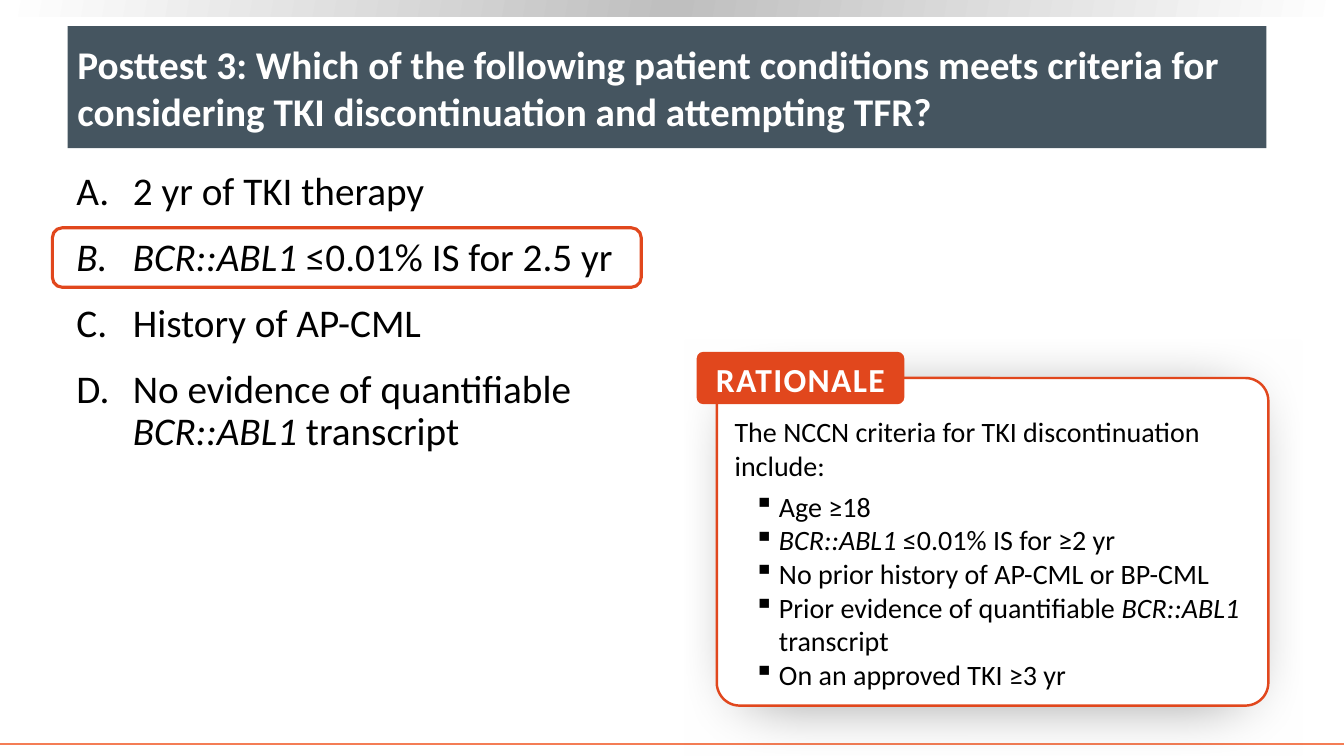
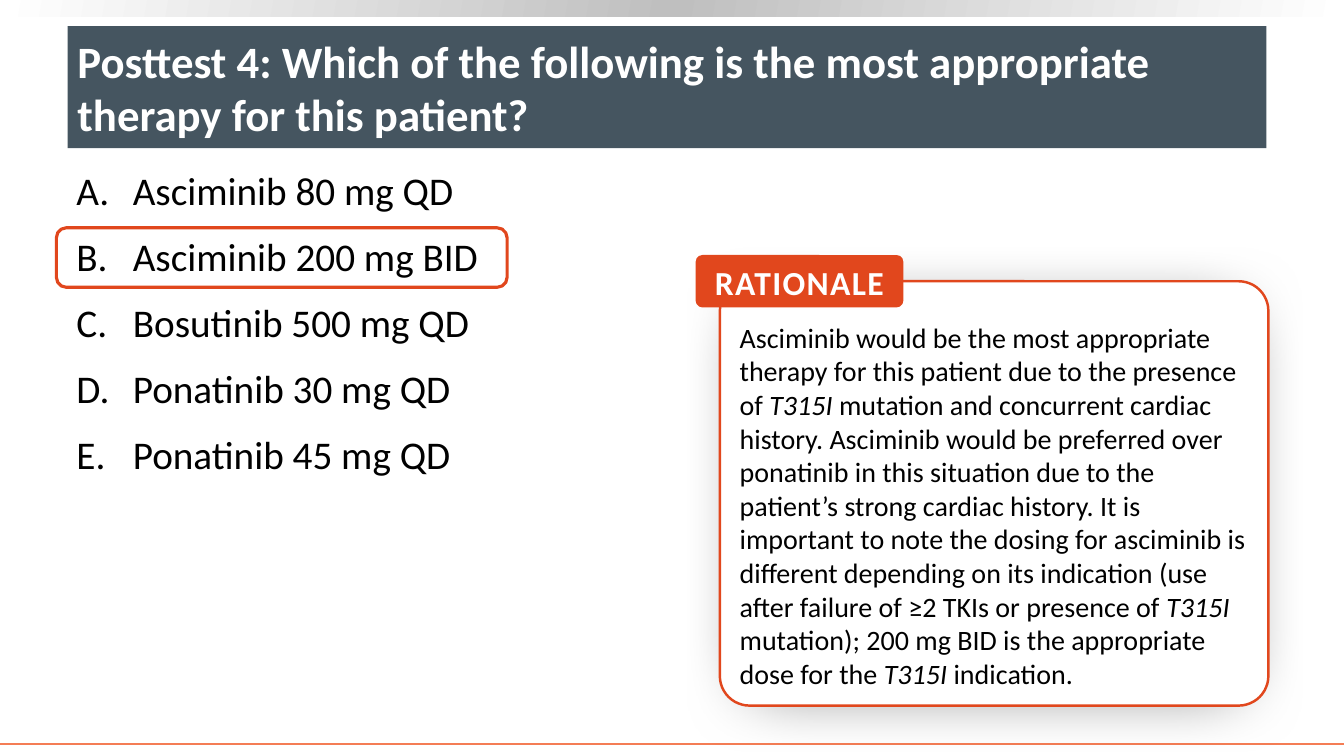
from lxml import etree
from pptx import Presentation
from pptx.dml.color import RGBColor
from pptx.enum import shapes, text
from pptx.oxml.ns import qn
from pptx.util import Pt

PX = 9144
WIDTH, HEIGHT = 1333, 750
FONT = "Calibri"
COLORS = {
    "white": "FFFFFF",
    "black": "000000",
    "silver": "BFBFBF",
    "slate": "455560",
    "orange": "E1471D",
    "footer": "F47D55",
}

QUESTIONS = [
    {
        "title": "Posttest 3: Which of the following patient conditions meets criteria for "
                 "considering TKI discontinuation and attempting TFR?",
        "title_size": 28,
        "answers": [
            "2 yr of TKI therapy",
            "*BCR::ABL1* ≤0.01% IS for 2.5 yr",
            "History of AP-CML",
            "No evidence of quantifiable *BCR::ABL1* transcript",
        ],
        "answers_width": 601,
        "highlight": (52, 226, 584, 59),
        "rationale": "The NCCN criteria for TKI discontinuation include:",
        "criteria": [
            "Age ≥18",
            "*BCR::ABL1* ≤0.01% IS for ≥2 yr",
            "No prior history of AP-CML or BP-CML",
            "Prior evidence of quantifiable *BCR::ABL1* transcript",
            "On an approved TKI ≥3 yr",
        ],
        "panel": (711, 375, 547, 325),
        "tag_left": 691,
    },
    {
        "title": "Posttest 4: Which of the following is the most appropriate therapy "
                 "for this patient?",
        "title_size": 32,
        "answers": [
            "Asciminib 80 mg QD",
            "Asciminib 200 mg BID",
            "Bosutinib 500 mg QD",
            "Ponatinib 30 mg QD",
            "Ponatinib 45 mg QD",
        ],
        "answers_width": 1190,
        "highlight": (56, 226, 447, 59),
        "rationale": "Asciminib would be the most appropriate therapy for this patient due to "
                     "the presence of *T315I* mutation and concurrent cardiac history. Asciminib "
                     "would be preferred over ponatinib in this situation due to the patient’s "
                     "strong cardiac history. It is important to note the dosing for asciminib is "
                     "different depending on its indication (use after failure of ≥2 TKIs or "
                     "presence of *T315I* mutation); 200 mg BID is the appropriate dose for the "
                     "*T315I* indication.",
        "criteria": [],
        "panel": (714, 279, 544, 421),
        "tag_left": 690,
    },
]


def color(name):
    return RGBColor.from_string(COLORS[name])


def child(parent, tag, **attributes):
    return etree.SubElement(parent, qn(tag), attributes)


def add_box(page, kind, area, fill=None, line=None, weight=1, radius=None):
    box = page.shapes.add_shape(kind, *(value * PX for value in area))
    box.shadow.inherit = False
    if fill:
        box.fill.solid()
        box.fill.fore_color.rgb = color(fill)
    else:
        box.fill.background()
    if line:
        box.line.color.rgb = color(line)
        box.line.width = Pt(weight)
    else:
        box.line.fill.background()
    if radius is not None:
        box.adjustments[0] = radius
    return box


def set_frame(box, anchor, insets=(10, 5, 10, 5)):
    frame = box.text_frame
    frame.word_wrap = True
    frame.vertical_anchor = anchor
    (frame.margin_left, frame.margin_top,
     frame.margin_right, frame.margin_bottom) = (value * PX for value in insets)
    return frame


def write(para, content, size, ink="black", bold=False, align=text.PP_ALIGN.LEFT):
    para.alignment = align
    for index, part in enumerate(content.split("*")):
        if part:
            span = para.add_run()
            span.text = part
            span.font.name = FONT
            span.font.size = Pt(size)
            span.font.bold = bold
            span.font.italic = index % 2 == 1
            span.font.color.rgb = color(ink)


def add_bullet(para, left, hanging, tag, **attributes):
    properties = para._p.get_or_add_pPr()
    properties.set("marL", str(left * PX))
    properties.set("indent", str(-hanging * PX))
    child(properties, tag, **attributes)


def add_gradient(box, names, angle):
    properties = box._element.spPr
    gradient = etree.Element(qn("a:gradFill"), rotWithShape="1")
    stops = child(gradient, "a:gsLst")
    for index, name in enumerate(names):
        position = 100000 * index // (len(names) - 1)
        stop = child(stops, "a:gs", pos=str(position))
        child(stop, "a:srgbClr", val=COLORS[name])
    child(gradient, "a:lin", ang=str(angle * 60000), scaled="0")
    properties.replace(properties.find(qn("a:noFill")), gradient)


def add_shadow(box):
    effects = box._element.spPr.find(qn("a:effectLst"))
    shadow = child(effects, "a:outerShdw", blurRad=str(Pt(46.9)), dist=str(Pt(4)),
                   dir="5400000", sx="90000", sy="90000", algn="ctr", rotWithShape="0")
    ink = child(shadow, "a:srgbClr", val=COLORS["black"])
    child(ink, "a:alpha", val="50000")


def add_bands(page):
    band = add_box(page, shapes.MSO_SHAPE.RECTANGLE, (0, 0, WIDTH, 16))
    add_gradient(band, ["white", "silver", "white"], 190)
    rule = page.shapes.add_connector(
        shapes.MSO_CONNECTOR.STRAIGHT, 0, 738 * PX, WIDTH * PX, 738 * PX)
    rule.line.color.rgb = color("footer")
    rule.line.width = Pt(1.5)
    child(rule._element.spPr, "a:effectLst")


def add_title(page, title, size):
    box = add_box(page, shapes.MSO_SHAPE.RECTANGLE, (67, 26, 1189, 121), "slate")
    frame = set_frame(box, text.MSO_ANCHOR.MIDDLE)
    write(frame.paragraphs[0], title, size, "white", bold=True)


def add_answers(page, answers, width):
    box = page.shapes.add_textbox(66 * PX, 165 * PX, width * PX, 509 * PX)
    frame = set_frame(box, text.MSO_ANCHOR.TOP)
    for index, answer in enumerate(answers):
        para = frame.add_paragraph() if index else frame.paragraphs[0]
        add_bullet(para, 56, 56, "a:buAutoNum", type="alphaUcPeriod")
        para.line_spacing = 0.9
        para.space_before = Pt(10 if index else 0)
        para.space_after = Pt(7)
        write(para, answer, 28)


def add_rationale(page, area, tag_left, rationale, criteria):
    rounded = shapes.MSO_SHAPE.ROUNDED_RECTANGLE
    panel = add_box(page, rounded, area, "white", "orange", 1.75, 0.07)
    add_shadow(panel)
    frame = set_frame(panel, text.MSO_ANCHOR.TOP, (11, 30, 10, 5))
    para = frame.paragraphs[0]
    para.space_after = Pt(5)
    write(para, rationale, 20)
    for criterion in criteria:
        para = frame.add_paragraph()
        add_bullet(para, 44, 25, "a:buChar", char="▪")
        write(para, criterion, 20)

    tag = add_box(page, rounded, (tag_left, area[1] - 26, 206, 52), "orange", radius=0.13)
    para = set_frame(tag, text.MSO_ANCHOR.MIDDLE, (0, 2, 0, 0)).paragraphs[0]
    write(para, "RATIONALE", 24, "white", bold=True, align=text.PP_ALIGN.CENTER)
    para.runs[0].font._element.set("spc", "100")


def main():
    deck = Presentation()
    deck.slide_width, deck.slide_height = WIDTH * PX, HEIGHT * PX
    for question in QUESTIONS:
        page = deck.slides.add_slide(deck.slide_layouts[6])
        add_bands(page)
        add_title(page, question["title"], question["title_size"])
        add_answers(page, question["answers"], question["answers_width"])
        add_rationale(page, question["panel"], question["tag_left"],
                      question["rationale"], question["criteria"])
        add_box(page, shapes.MSO_SHAPE.ROUNDED_RECTANGLE, question["highlight"],
                line="orange", weight=2.25)
    deck.save("out.pptx")


if __name__ == "__main__":
    main()
